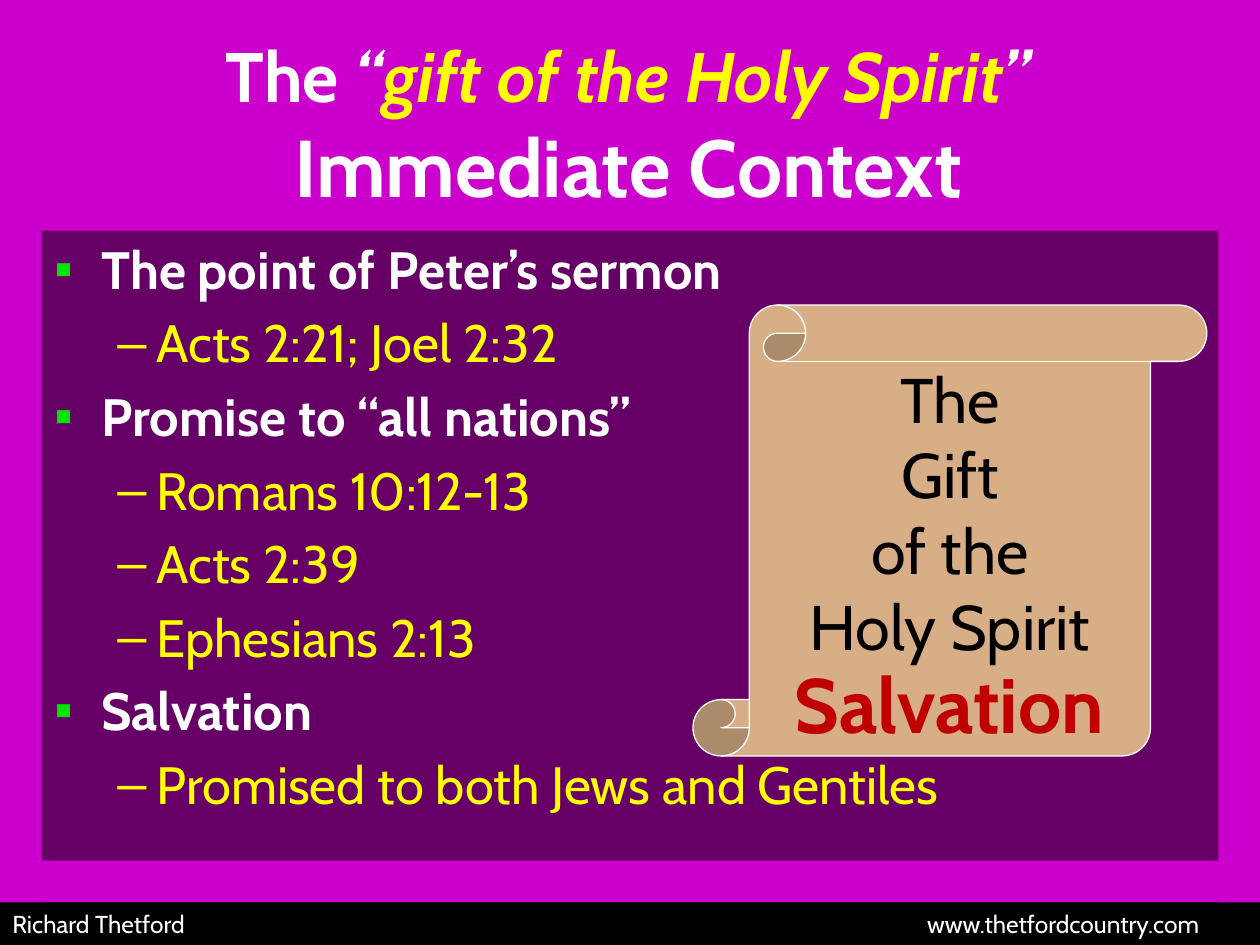
from dataclasses import dataclass

import lxml.etree
import pptx
import pptx.dml.color
import pptx.enum.shapes
import pptx.enum.text
import pptx.oxml.ns
import pptx.util

Cm = pptx.util.Cm
RGBColor = pptx.dml.color.RGBColor
Align = pptx.enum.text.PP_ALIGN
Shape = pptx.enum.shapes.MSO_SHAPE

PURPLE = RGBColor(0x66, 0x00, 0x66)
MAGENTA = RGBColor(0xCC, 0x00, 0xCC)
WHITE = RGBColor(0xFF, 0xFF, 0xFF)
YELLOW = RGBColor(0xFF, 0xFF, 0x00)
GREEN = RGBColor(0x00, 0xE4, 0x00)
PARCHMENT = RGBColor(0xD7, 0xAE, 0x85)
BLACK = RGBColor(0x00, 0x00, 0x00)
RED = RGBColor(0xC0, 0x00, 0x00)

FONT = "Cabin"
WIDTH, HEIGHT = 25.4, 19.05
MARGIN = 0.84
TITLE_HEIGHT = 4.65
FOOTER_TOP = 18.19


@dataclass(frozen=True)
class Area:
    left: float
    top: float
    width: float
    height: float

    def lengths(self) -> tuple:
        return Cm(self.left), Cm(self.top), Cm(self.width), Cm(self.height)


@dataclass(frozen=True)
class Level:
    bullet: str
    bullet_color: RGBColor
    margin: float
    indent: float
    color: RGBColor
    bold: bool


@dataclass(frozen=True)
class Label:
    text: str
    area: Area
    size: int
    color: RGBColor
    bold: bool


LEVELS = [
    Level("▪", GREEN, 0.95, -0.95, WHITE, True),
    Level("–", YELLOW, 2.06, -0.79, YELLOW, False),
]
POINTS = [
    (0, "The point of Peter’s sermon"),
    (1, "Acts 2:21; Joel 2:32"),
    (0, "Promise to “all nations”"),
    (1, "Romans 10:12-13"),
    (1, "Acts 2:39"),
    (1, "Ephesians 2:13"),
    (0, "Salvation"),
    (1, "Promised to both Jews and Gentiles"),
]
TITLE_SPANS = [
    ("The ", WHITE, False),
    ("“", WHITE, True),
    ("gift of the Holy Spirit", YELLOW, True),
    ("”", WHITE, True),
]
FRAME = [
    Area(0, 0, MARGIN, HEIGHT),
    Area(WIDTH - MARGIN, 0, MARGIN, HEIGHT),
    Area(0, FOOTER_TOP - MARGIN, WIDTH, MARGIN),
]
LABELS = [
    Label("The\vGift\vof the\vHoly Spirit", Area(15.44, 7.14, 7.42, 6.4), 36, BLACK, False),
    Label("Salvation", Area(15.24, 13.11, 7.8, 2.13), 44, RED, True),
]


def style(font, size: int, color: RGBColor, bold: bool = False) -> None:
    font.name = FONT
    font.size = pptx.util.Pt(size)
    font.color.rgb = color
    font.bold = bold


def add_child(parent, tag: str, **attributes: str):
    return lxml.etree.SubElement(parent, pptx.oxml.ns.qn(tag), **attributes)


def draw_shape(page, kind, area: Area, fill: RGBColor):
    shape = page.shapes.add_shape(kind, *area.lengths())
    shape.shadow.inherit = False
    shape.fill.solid()
    shape.fill.fore_color.rgb = fill
    shape.line.fill.background()
    return shape


def place(holder, area: Area) -> None:
    holder.left, holder.top, holder.width, holder.height = area.lengths()
    holder.text_frame.auto_size = pptx.enum.text.MSO_AUTO_SIZE.NONE
    holder.element.getparent().append(holder.element)


def fill_title(title) -> None:
    place(title, Area(MARGIN, 0.64, 23.65, 3.68))
    title.text_frame.vertical_anchor = pptx.enum.text.MSO_ANCHOR.MIDDLE
    para = title.text_frame.paragraphs[0]
    para.alignment = Align.CENTER
    style(para.font, 40, WHITE, True)
    for text, color, italic in TITLE_SPANS:
        span = para.add_run()
        span.text = text
        span.font.color.rgb = color
        span.font.italic = italic
    para.add_line_break()
    span = para.add_run()
    span.text = "Immediate Context"
    span.font.size = pptx.util.Pt(46)


def fill_body(body) -> None:
    place(body, Area(MARGIN, TITLE_HEIGHT, 23.72, 13.54))
    frame = body.text_frame
    for index, (depth, text) in enumerate(POINTS):
        para = frame.add_paragraph() if index else frame.paragraphs[0]
        level = LEVELS[depth]
        para.text = text
        para.level = depth
        properties = para._p.get_or_add_pPr()
        properties.set("marL", str(Cm(level.margin)))
        properties.set("indent", str(Cm(level.indent)))
        color = add_child(properties, "a:buClr")
        add_child(color, "a:srgbClr", val=str(level.bullet_color))
        add_child(properties, "a:buChar", char=level.bullet)
        style(para.font, 30, level.color, level.bold)


def draw_label(page, label: Label) -> None:
    box = page.shapes.add_textbox(*label.area.lengths())
    box.text_frame.word_wrap = True
    para = box.text_frame.paragraphs[0]
    para.text = label.text
    para.alignment = Align.CENTER
    style(para.font, label.size, label.color, label.bold)


def draw_footer(page) -> None:
    area = Area(0, FOOTER_TOP, WIDTH, HEIGHT - FOOTER_TOP)
    footer = draw_shape(page, Shape.RECTANGLE, area, BLACK)
    para = footer.text_frame.paragraphs[0]
    para.text = "Richard Thetford\twww.thetfordcountry.com"
    para.alignment = Align.LEFT
    tabs = add_child(para._p.get_or_add_pPr(), "a:tabLst")
    add_child(tabs, "a:tab", pos=str(Cm(23.93)), algn="r")
    style(para.font, 14, WHITE)


def main() -> None:
    deck = pptx.Presentation()
    deck.slide_width, deck.slide_height = Cm(WIDTH), Cm(HEIGHT)
    page = deck.slides.add_slide(deck.slide_layouts[1])
    page.background.fill.solid()
    page.background.fill.fore_color.rgb = PURPLE

    draw_shape(page, Shape.RECTANGLE, Area(0, 0, WIDTH, TITLE_HEIGHT), MAGENTA)
    fill_title(page.shapes.title)
    fill_body(page.placeholders[1])
    for area in FRAME:
        draw_shape(page, Shape.RECTANGLE, area, MAGENTA)
    scroll = draw_shape(page, Shape.VERTICAL_SCROLL, Area(13.97, 6.15, 10.36, 9.09), PARCHMENT)
    scroll.line.color.rgb = WHITE
    scroll.line.width = pptx.util.Pt(0.75)
    for label in LABELS:
        draw_label(page, label)
    draw_footer(page)
    deck.save("out.pptx")


if __name__ == "__main__":
    main()
